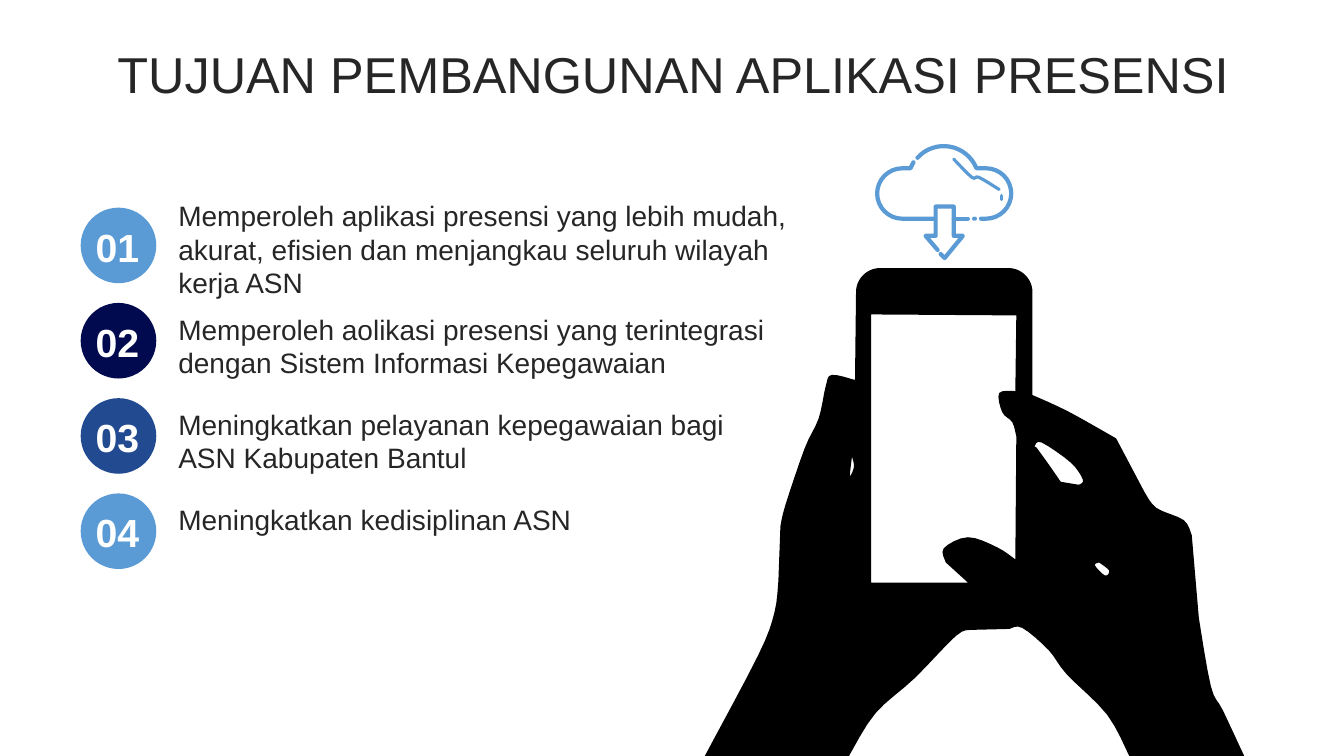
import math
from dataclasses import dataclass

import pptx
import pptx.dml.color
import pptx.enum.shapes
import pptx.enum.text
import pptx.oxml
import pptx.oxml.ns
import pptx.util
from pptx.util import Inches

RGBColor = pptx.dml.color.RGBColor
PP_ALIGN = pptx.enum.text.PP_ALIGN
MSO_ANCHOR = pptx.enum.text.MSO_ANCHOR
OVAL = pptx.enum.shapes.MSO_SHAPE.OVAL

TEXT = RGBColor(0x26, 0x26, 0x26)
WHITE = RGBColor(0xFF, 0xFF, 0xFF)
BLACK = RGBColor(0, 0, 0)
SKY = RGBColor(0x5A, 0x9B, 0xD5)
NAVY = RGBColor(0x01, 0x0A, 0x4F)
BLUE = RGBColor(0x22, 0x4A, 0x90)

Points = list[tuple[float, float]]


@dataclass
class Goal:
    text: str
    color: RGBColor
    top: float
    width: float
    height: float


GOALS = [
    Goal("Memperoleh aplikasi presensi yang lebih mudah, akurat, efisien dan "
         "menjangkau seluruh wilayah kerja ASN", SKY, 1.92, 6.4, 1.11),
    Goal("Memperoleh aolikasi presensi yang terintegrasi dengan Sistem "
         "Informasi Kepegawaian", NAVY, 3.05, 6.67, 0.77),
    Goal("Meningkatkan pelayanan kepegawaian bagi ASN Kabupaten Bantul",
         BLUE, 3.99, 5.97, 0.77),
    Goal("Meningkatkan kedisiplinan ASN", SKY, 4.94, 5.97, 0.44),
]
BADGE_TOP, BADGE_STEP, BADGE_SIZE = 2.06, 0.945, 0.75


def smooth(run: Points) -> Points:
    """Return a Catmull-Rom curve through the points of a run."""
    out = run[:1]
    for i in range(len(run) - 1):
        a, b, c, d = (run[max(0, min(j, len(run) - 1))] for j in range(i - 1, i + 3))
        for t in (0.25, 0.5, 0.75, 1):
            out.append(tuple(
                0.5 * (2 * q + (r - p) * t + (2 * p - 5 * q + 4 * r - w) * t**2
                       + (3 * q - p - 3 * r + w) * t**3)
                for p, q, r, w in zip(a, b, c, d)))
    return out


def arc(cx: float, cy: float, radius: float, start: int, end: int) -> Points:
    """Return points on a circle; degrees run counter-clockwise from the right."""
    return [(cx + radius * math.cos(math.radians(start + (end - start) * i / 16)),
             cy - radius * math.sin(math.radians(start + (end - start) * i / 16)))
            for i in range(17)]


# Each contour is a list of runs; a run is smooth, and runs meet at corners.
HANDS: list[list[Points]] = [
    [  # phone and both hands
        arc(8.73, 2.9, 0.24, 180, 90), arc(10, 2.9, 0.24, 90, 0),
        [(10.24, 3.92), (10.59, 4.08), (11.07, 4.35)],
        [(11.35, 4.88), (11.47, 5.04), (11.74, 5.16), (11.82, 5.31)],
        [(11.89, 6.13), (12.01, 6.81), (12.13, 7.05), (12.34, 7.5)],
        [(11.2, 7.5), (10.98, 7.09), (10.58, 6.69), (10.4, 6.45), (10.14, 6.23), (10.01, 6.24)],
        [(9.62, 6.25), (9.48, 6.31), (9.07, 6.73), (8.68, 7.08), (8.42, 7.5)],
        [(6.99, 7.5), (7.52, 6.5), (7.68, 6.08), (7.72, 5.76)],
        [(7.74, 5.22), (7.79, 5.01), (7.98, 4.45), (8.12, 4.15), (8.19, 3.83),
         (8.25, 3.72), (8.48, 3.77)],
    ],
    [  # screen, with the two fingers reaching over it
        [(8.64, 3.12)], [(8.64, 5.78)], [(9.6, 5.78)],
        [(9.38, 5.58), (9.36, 5.44), (9.6, 5.33), (9.89, 5.43), (10.07, 5.55)],
        [(10.08, 4.33), (10.04, 4.19), (9.94, 4.09), (9.91, 3.9), (10.07, 3.88)],
        [(10.08, 3.13)],
    ],
    [  # gap under the index finger
        [(10.26, 4.43), (10.33, 4.39), (10.62, 4.59), (10.74, 4.76), (10.7, 4.81)],
        [(10.52, 4.78), (10.41, 4.62), (10.28, 4.44)],
    ],
    [[(10.9, 5.58), (10.86, 5.61), (10.96, 5.71), (11, 5.66), (10.9, 5.58)]],
    [[(8.45, 4.53), (8.43, 4.72), (8.47, 4.63), (8.45, 4.53)]],
]


def add_outline(s, contours: list[Points], close: bool = False):
    emu = [[(Inches(x), Inches(y)) for x, y in contour] for contour in contours]
    builder = s.shapes.build_freeform(*emu[0][0])
    for i, points in enumerate(emu):
        if i:
            builder.move_to(*points[0])
        builder.add_line_segments(points[1:], close=close)
    sp = builder.convert_to_shape()
    sp.shadow.inherit = False
    return sp


def add_stroke(s, contours: list[Points], width: float) -> None:
    sp = add_outline(s, contours)
    sp.fill.background()
    sp.line.color.rgb = SKY
    sp.line.width = pptx.util.Pt(width)
    ln = sp.line._get_or_add_ln()
    ln.set("cap", "rnd")
    ln.append(pptx.oxml.parse_xml(f"<a:round {pptx.oxml.ns.nsdecls('a')}/>"))


def add_circle(s, left: float, top: float, width: float, height: float, color: RGBColor) -> None:
    sp = s.shapes.add_shape(OVAL, Inches(left), Inches(top), Inches(width), Inches(height))
    sp.shadow.inherit = False
    sp.fill.solid()
    sp.fill.fore_color.rgb = color
    sp.line.fill.background()


def write(sp, text: str, *, size: int, color: RGBColor = TEXT, bold: bool = False,
          align=PP_ALIGN.LEFT, anchor=MSO_ANCHOR.TOP, spacing: float = 1.0) -> None:
    tf = sp.text_frame
    tf.word_wrap = True
    tf.auto_size = pptx.enum.text.MSO_AUTO_SIZE.NONE
    tf.vertical_anchor = anchor
    p = tf.paragraphs[0]
    p.alignment = align
    p.line_spacing = spacing
    r = p.add_run()
    r.text = text
    r.font.name = "Arial"
    r.font.size = pptx.util.Pt(size)
    r.font.bold = bold
    r.font.color.rgb = color


def add_text(s, left: float, top: float, width: float, height: float, text: str, **fmt) -> None:
    write(s.shapes.add_textbox(Inches(left), Inches(top), Inches(width), Inches(height)), text, **fmt)


def add_cloud(s) -> None:
    left_side = [(9.06, 1.61), (9.03, 1.67), *arc(8.95, 1.92, 0.25, 90, 270), (9.27, 2.17)]
    arrow = [(9.3, 2.48), (9.18, 2.34), (9.28, 2.34), (9.28, 2.05), (9.46, 2.05),
             (9.46, 2.34), (9.55, 2.34), (9.37, 2.56), (9.33, 2.52)]
    add_stroke(s, [left_side, arrow, [(9.46, 2.17), (9.6, 2.17)]], 3)
    add_stroke(s, [[*arc(9.36, 1.8, 0.35, 138, 22), *arc(9.78, 1.92, 0.25, 90, -90), (9.73, 2.17)]], 3)
    add_stroke(s, [smooth([(9.46, 1.58), (9.64, 1.76), (9.71, 1.76), (9.91, 1.88)])], 2.25)
    add_stroke(s, [[(9.93, 1.94), (9.93, 1.98)]], 2.25)
    add_circle(s, 9.64, 2.15, 0.05, 0.04, SKY)


def main() -> None:
    prs = pptx.Presentation()
    prs.slide_width, prs.slide_height = Inches(13.33), Inches(7.5)
    s = prs.slides.add_slide(prs.slide_layouts[5])
    title = s.shapes.title
    title.left, title.top, title.width, title.height = map(Inches, (0.35, 0.37, 12.66, 0.79))
    write(title, "TUJUAN PEMBANGUNAN APLIKASI PRESENSI", size=36,
          align=PP_ALIGN.CENTER, anchor=MSO_ANCHOR.MIDDLE, spacing=0.9)

    hands = add_outline(s, [[pt for run in c for pt in smooth(run)] for c in HANDS], close=True)
    hands.fill.solid()
    hands.fill.fore_color.rgb = BLACK
    hands.line.fill.background()
    add_cloud(s)

    for i, goal in enumerate(GOALS):
        top = BADGE_TOP + i * BADGE_STEP
        add_text(s, 1.67, goal.top, goal.width, goal.height, goal.text, size=20)
        add_circle(s, 0.8, top, BADGE_SIZE, BADGE_SIZE, goal.color)
        add_text(s, 0.82, top + 0.1, 0.69, 0.57, f"{i + 1:02}", size=28, color=WHITE, bold=True,
                 align=PP_ALIGN.CENTER, anchor=MSO_ANCHOR.MIDDLE)
    prs.save("out.pptx")


if __name__ == "__main__":
    main()
